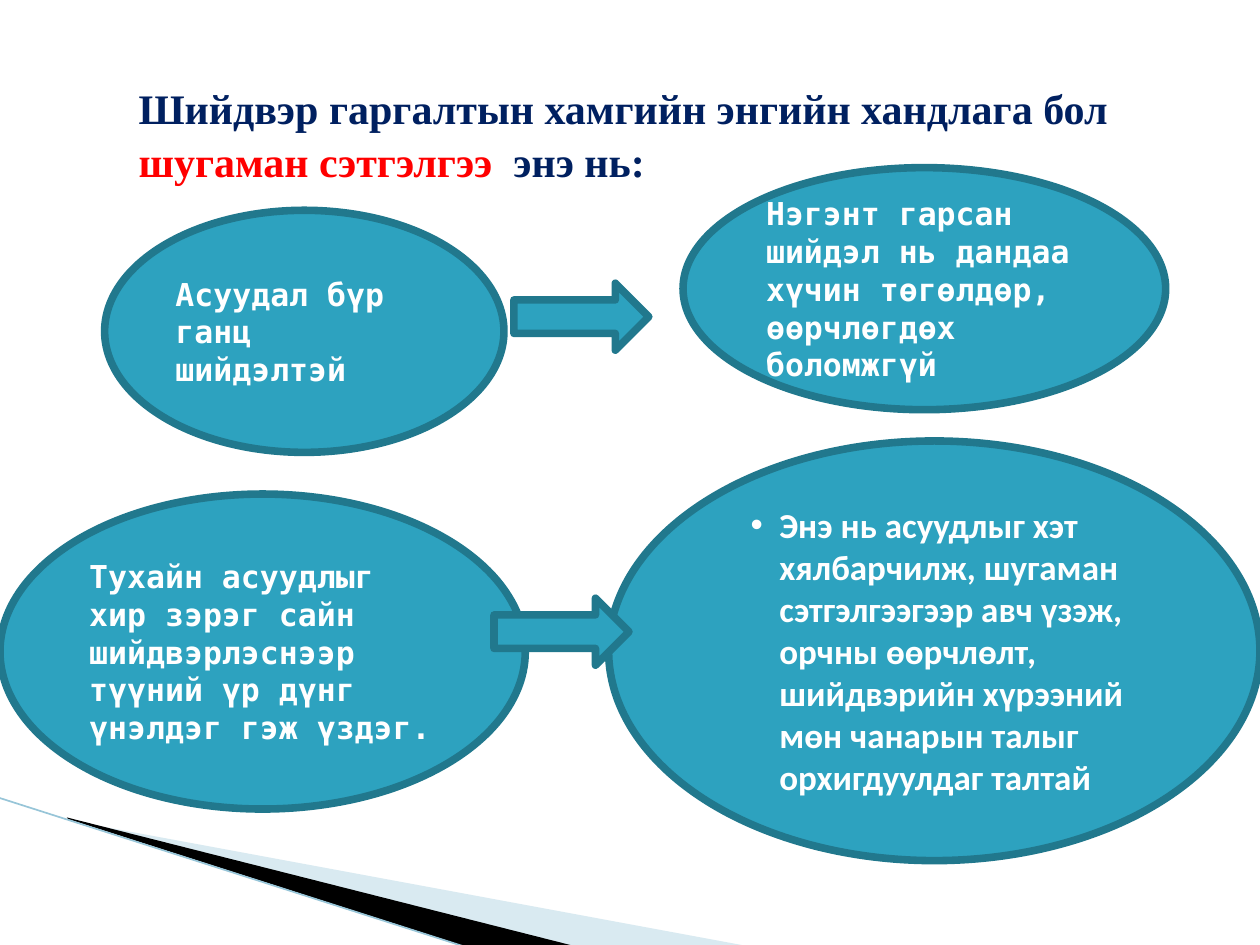
"""Build the slide on linear thinking in decision making."""
from dataclasses import dataclass
from typing import Optional

import lxml.etree
import pptx
import pptx.dml.color
import pptx.enum.shapes
import pptx.enum.text
import pptx.oxml
import pptx.oxml.ns
import pptx.util

Cm = pptx.util.Cm
Pt = pptx.util.Pt
Kind = pptx.enum.shapes.MSO_SHAPE
qn = pptx.oxml.ns.qn


@dataclass(frozen=True)
class Theme:
    """Colours, fonts and sizes of the slide."""
    fill: str = "2DA2BF"
    outline: str = "21788D"
    white: str = "FFFFFF"
    navy: str = "002060"
    red: str = "FF0000"
    pale: str = "A0CBDC"
    black: str = "000000"
    edge: str = "97C5D8"
    title_font: str = "Times New Roman"
    mono_font: str = "DejaVu Sans Mono"
    list_font: str = "Calibri"
    title_size: int = 24
    mono_size: int = 18
    list_size: int = 20
    outline_width: float = 4.33
    edge_width: float = 0.95


@dataclass(frozen=True)
class Bubble:
    """An ellipse with its statement."""
    left: float
    top: float
    width: float
    height: float
    text: str
    bulleted: bool = False


@dataclass(frozen=True)
class Wedge:
    """A filled corner polygon."""
    points: tuple
    colour: str
    opacity: Optional[int] = None


THEME = Theme()
TITLE = (
    ("Шийдвэр гаргалтын хамгийн энгийн хандлага бол ", THEME.navy),
    ("шугаман сэтгэлгээ  ", THEME.red),
    ("энэ нь:", THEME.navy),
)
WEDGES = (
    Wedge(((1.4, 16.54), (15.11, 19.08), (11.58, 19.08), (1.4, 16.51)), THEME.pale, 40),
    Wedge(((1.35, 16.48), (11.61, 19.08), (9.45, 19.1), (1.37, 16.51)), THEME.black),
)
BUBBLES = (
    Bubble(2.11, 4.24, 8.05, 4.88, "Асуудал бүр ганц шийдэлтэй"),
    Bubble(13.77, 3.38, 9.73, 4.88,
           "Нэгэнт гарсан шийдэл нь дандаа хүчин төгөлдөр, өөрчлөгдөх боломжгүй"),
    Bubble(0, 9.96, 10.59, 6.35,
           "Тухайн асуудлыг хир зэрэг сайн шийдвэрлэснээр түүний үр дүнг үнэлдэг гэж үздэг."),
    Bubble(12.27, 8.89, 13.13, 8.46,
           "Энэ нь асуудлыг хэт хялбарчилж, шугаман сэтгэлгээгээр авч үзэж, орчны өөрчлөлт, "
           "шийдвэрийн хүрээний мөн чанарын талыг орхигдуулдаг талтай", True),
)
ARROWS = ((10.36, 5.71), (9.96, 12.06))


def rgb(colour: str) -> pptx.dml.color.RGBColor:
    """Return a colour object for a hex value."""
    return pptx.dml.color.RGBColor.from_string(colour)


def style_font(font, name: str, size: int) -> None:
    """Set a bold font of the given name and size."""
    font.name, font.size, font.bold = name, Pt(size), True


def draw_wedge(page, wedge: Wedge) -> None:
    """Draw one corner polygon."""
    points = [(Cm(x), Cm(y)) for x, y in wedge.points]
    builder = page.shapes.build_freeform(*points[0])
    builder.add_line_segments(points[1:])
    shape = builder.convert_to_shape()
    shape.shadow.inherit = False
    shape.fill.solid()
    shape.fill.fore_color.rgb = rgb(wedge.colour)
    shape.line.fill.background()
    if wedge.opacity is not None:
        colour = shape.fill._xPr.find(qn("a:solidFill"))[0]
        lxml.etree.SubElement(colour, qn("a:alpha"), val=str(wedge.opacity * 1000))


def draw_edge(page) -> None:
    """Draw the thin line along the corner."""
    edge = page.shapes.add_connector(
        pptx.enum.shapes.MSO_CONNECTOR.STRAIGHT, Cm(-0.03), Cm(16.08), Cm(9.42), Cm(19.1))
    edge.line.color.rgb = rgb(THEME.edge)
    edge.line.width = Pt(THEME.edge_width)
    lxml.etree.SubElement(edge._element.spPr, qn("a:effectLst"))


def draw_title(page) -> None:
    """Fill and place the title."""
    title = page.shapes.title
    title.left, title.top, title.width, title.height = Cm(2.54), Cm(1.47), Cm(22.86), Cm(2.31)
    frame = title.text_frame
    frame.word_wrap = True
    frame.auto_size = pptx.enum.text.MSO_AUTO_SIZE.SHAPE_TO_FIT_TEXT
    frame.vertical_anchor = pptx.enum.text.MSO_ANCHOR.TOP
    para = frame.paragraphs[0]
    para.alignment = pptx.enum.text.PP_ALIGN.LEFT
    para.line_spacing = 1.06
    style_font(para.font, THEME.title_font, THEME.title_size)
    for text, colour in TITLE:
        span = para.add_run()
        span.text = text
        span.font.color.rgb = rgb(colour)


def draw_solid(page, kind, left: float, top: float, width: float, height: float):
    """Draw a filled and outlined preset shape."""
    shape = page.shapes.add_shape(kind, Cm(left), Cm(top), Cm(width), Cm(height))
    shape.shadow.inherit = False
    shape.fill.solid()
    shape.fill.fore_color.rgb = rgb(THEME.fill)
    shape.line.color.rgb = rgb(THEME.outline)
    shape.line.width = Pt(THEME.outline_width)
    return shape


def add_bullet(para) -> None:
    """Give a paragraph a hanging bullet."""
    properties = para._p.get_or_add_pPr()
    properties.set("marL", str(Cm(1.27)))
    properties.set("indent", str(Cm(-0.58)))
    lxml.etree.SubElement(properties, qn("a:buFont"), typeface="Arial")
    lxml.etree.SubElement(properties, qn("a:buChar"), char="•")


def draw_bubble(page, bubble: Bubble) -> None:
    """Draw an ellipse and its text."""
    shape = draw_solid(page, Kind.OVAL, bubble.left, bubble.top, bubble.width, bubble.height)
    frame = shape.text_frame
    frame.word_wrap = True
    frame.vertical_anchor = pptx.enum.text.MSO_ANCHOR.MIDDLE
    para = frame.paragraphs[0]
    para.text = bubble.text
    para.alignment = pptx.enum.text.PP_ALIGN.LEFT
    if bubble.bulleted:
        add_bullet(para)
        style_font(para.font, THEME.list_font, THEME.list_size)
    else:
        style_font(para.font, THEME.mono_font, THEME.mono_size)
    para.font.color.rgb = rgb(THEME.white)


def main() -> None:
    """Build and save the deck."""
    deck = pptx.Presentation()
    deck.slide_width, deck.slide_height = Cm(25.4), Cm(19.05)
    page = deck.slides.add_slide(deck.slide_layouts.get_by_name("Title Only"))
    for wedge in WEDGES:
        draw_wedge(page, wedge)
    draw_edge(page)
    draw_title(page)
    for bubble in BUBBLES:
        draw_bubble(page, bubble)
    for left, top in ARROWS:
        draw_solid(page, Kind.RIGHT_ARROW, left, top, 2.72, 1.35)
    deck.save("out.pptx")


if __name__ == "__main__":
    main()
